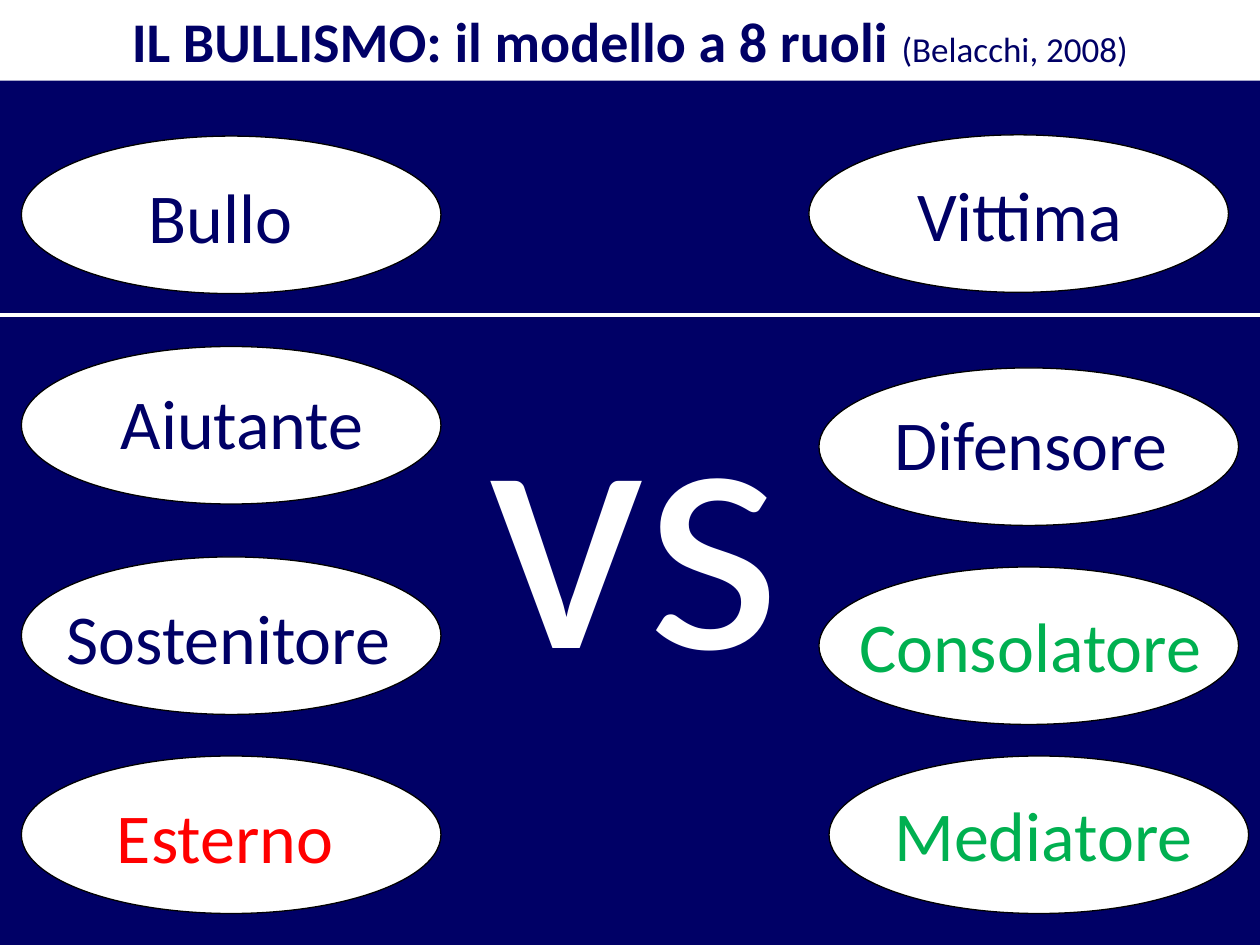
from pptx import Presentation
from pptx.dml.color import RGBColor
from pptx.enum.shapes import MSO_CONNECTOR, MSO_SHAPE
from pptx.enum.text import MSO_ANCHOR, MSO_AUTO_SIZE, PP_ALIGN
from pptx.oxml.ns import qn
from pptx.util import Inches, Pt
from lxml import etree

OVAL = MSO_SHAPE.OVAL
STRAIGHT = MSO_CONNECTOR.STRAIGHT
TOP = MSO_ANCHOR.TOP
NO_FIT = MSO_AUTO_SIZE.NONE
LEFT, CENTER = PP_ALIGN.LEFT, PP_ALIGN.CENTER

COLORS = {"navy": "000066", "white": "FFFFFF", "black": "000000",
          "red": "FF0000", "green": "00B050"}
FONT = "Calibri"
OVAL_W, OVAL_H = 3.33, 1.25
LABEL_H = 0.77

# Role, oval (left, top), label (left, top, width), colour
BULLY_SIDE = [
    ("Bullo", (0.17, 1.08), (1.08, 1.33, 1.67), "navy"),
    ("Aiutante", (0.17, 2.75), (0.86, 2.96, 2.17), "navy"),
    ("Sostenitore", (0.17, 4.42), (0.43, 4.67, 3), "navy"),
    ("Esterno", (0.17, 6), (0.83, 6.25, 2.17), "red"),
]
VICTIM_SIDE = [
    ("Vittima", (6.42, 1.07), (7.18, 1.31, 1.92), "navy"),
    ("Difensore", (6.5, 2.92), (7, 3.13, 2.42), "navy"),
    ("Consolatore", (6.5, 4.5), (6.72, 4.73, 3.01), "green"),
    ("Mediatore", (6.58, 6), (7, 6.23, 2.67), "green"),
]


def rgb(name):
    return RGBColor.from_string(COLORS[name])


def write(frame, *runs, color="navy", align=LEFT):
    """Fill a text frame with runs given as (text, size, bold)."""
    frame.word_wrap = True
    frame.auto_size = NO_FIT
    frame.vertical_anchor = TOP
    paragraph = frame.paragraphs[0]
    paragraph.alignment = align
    for text, size, bold in runs:
        run = paragraph.add_run()
        run.text = text
        run.font.name = FONT
        run.font.size = Pt(size)
        run.font.bold = bold
        run.font.color.rgb = rgb(color)


def add_label(slide, box, text, size=40, **style):
    label = slide.shapes.add_textbox(*map(Inches, box))
    write(label.text_frame, (text, size, False), **style)


def add_heading(slide, box):
    heading = slide.shapes.title
    heading.left, heading.top, heading.width, heading.height = map(Inches, box)
    heading.fill.solid()
    heading.fill.fore_color.rgb = rgb("white")
    write(heading.text_frame,
          ("IL BULLISMO: il modello a 8 ruoli ", 32, True),
          ("(Belacchi, 2008)", 20, False), align=CENTER)


def add_role(slide, text, oval_at, label_box, color):
    oval = slide.shapes.add_shape(
        OVAL, *map(Inches, (*oval_at, OVAL_W, OVAL_H)))
    oval.shadow.inherit = False
    oval.fill.solid()
    oval.fill.fore_color.rgb = rgb("white")
    oval.line.color.rgb = rgb("black")
    oval.line.width = Pt(0.75)
    add_label(slide, (*label_box, LABEL_H), text, color=color)


def add_divider(slide, left, right, y):
    divider = slide.shapes.add_connector(
        STRAIGHT, *map(Inches, (left, y, right, y)))
    divider.line.color.rgb = rgb("white")
    divider.line.width = Pt(2.25)
    etree.SubElement(divider.element.spPr, qn("a:effectLst"))


def main():
    deck = Presentation()
    deck.slide_width, deck.slide_height = Inches(10), Inches(7.5)
    slide = deck.slides.add_slide(deck.slide_layouts[5])
    slide.background.fill.solid()
    slide.background.fill.fore_color.rgb = rgb("navy")

    # Heading band
    add_heading(slide, (0, 0, 10, 0.64))

    # Opposing roles
    for role in BULLY_SIDE + VICTIM_SIDE:
        add_role(slide, *role)
    add_label(slide, (3.65, 2.32, 2.77, 3.47), "vs", size=200,
              color="white", align=CENTER)

    # Line between the main pair and the supporting roles
    add_divider(slide, 0, 10, 2.5)

    deck.save("out.pptx")


if __name__ == "__main__":
    main()
